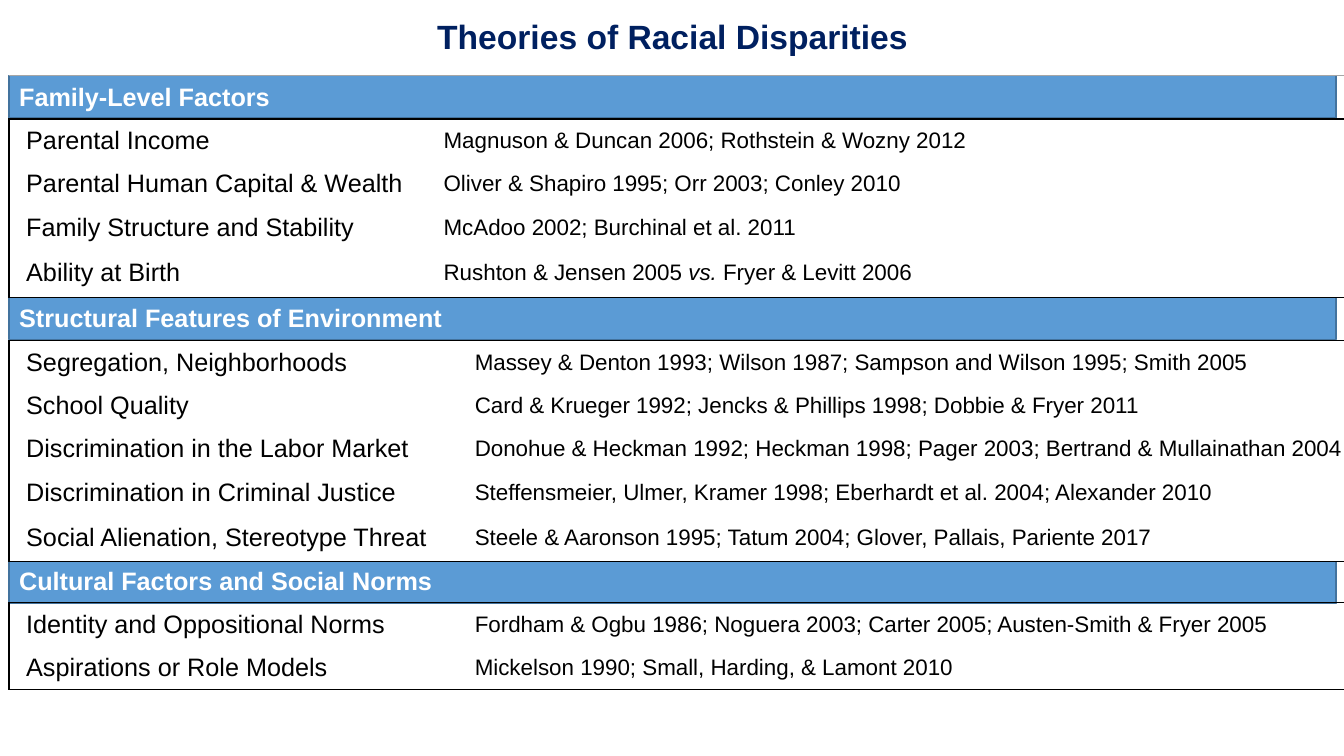
"""Builds a slide that tabulates theories of racial disparities with their citations."""
from lxml.etree import SubElement
from pptx import Presentation
from pptx.dml.color import RGBColor
from pptx.enum.shapes import MSO_SHAPE
from pptx.enum.text import MSO_ANCHOR, PP_ALIGN
from pptx.oxml.ns import qn
from pptx.util import Inches, Pt


def write(holder, text, size=18, color="000000", bold=False, align=PP_ALIGN.LEFT):
    """Write text into a cell or box; parts between asterisks are italic."""
    holder.vertical_anchor = MSO_ANCHOR.MIDDLE
    paragraph = getattr(holder, "text_frame", holder).paragraphs[0]
    paragraph.alignment = align
    for index, part in enumerate(text.split("*")):
        run = paragraph.add_run()
        run.text = part
        run.font.name = "Arial"
        run.font.size = Pt(size)
        run.font.bold = bold
        run.font.italic = index % 2 == 1
        run.font.color.rgb = RGBColor.from_string(color)


def set_borders(cell, **colors):
    """Draw the given sides in their colours and leave the other sides open."""
    cell.fill.background()
    properties = cell._tc.get_or_add_tcPr()
    for position, side in enumerate(("left", "right", "top", "bottom")):
        edge = properties.makeelement(qn("a:ln" + side[0].upper()), {"w": str(Pt(1))})
        if colors.get(side):
            fill = SubElement(edge, qn("a:solidFill"))
            SubElement(fill, qn("a:srgbClr"), val=colors[side])
        else:
            SubElement(edge, qn("a:noFill"))
        properties.insert(position, edge)


SECTIONS = [
    ("Family-Level Factors", 1, [
        ("Parental Income", "Magnuson & Duncan 2006; Rothstein & Wozny 2012"),
        ("Parental Human Capital & Wealth", "Oliver & Shapiro 1995; Orr 2003; Conley 2010"),
        ("Family Structure and Stability", "McAdoo 2002; Burchinal et al. 2011"),
        ("Ability at Birth", "Rushton & Jensen 2005 *vs.* Fryer & Levitt 2006"),
    ]),
    ("Structural Features of Environment", 2, [
        ("Segregation, Neighborhoods",
         "Massey & Denton 1993; Wilson 1987; Sampson and Wilson 1995; Smith 2005"),
        ("School Quality", "Card & Krueger 1992; Jencks & Phillips 1998; Dobbie & Fryer 2011"),
        ("Discrimination in the Labor Market",
         "Donohue & Heckman 1992; Heckman 1998; Pager 2003; Bertrand & Mullainathan 2004"),
        ("Discrimination in Criminal Justice",
         "Steffensmeier, Ulmer, Kramer 1998; Eberhardt et al. 2004; Alexander 2010"),
        ("Social Alienation, Stereotype Threat",
         "Steele & Aaronson 1995; Tatum 2004; Glover, Pallais, Pariente 2017"),
    ]),
    ("Cultural Factors and Social Norms", 2, [
        ("Identity and Oppositional Norms",
         "Fordham & Ogbu 1986; Noguera 2003; Carter 2005; Austen-Smith & Fryer 2005"),
        ("Aspirations or Role Models", "Mickelson 1990; Small, Harding, & Lamont 2010"),
    ]),
]
COLUMN_WIDTHS = [4.21, 0.13, 8.84]
ROW_HEIGHTS = [0.43] * 4 + [0.48] + [0.43] * 5 + [0.47, 0.41] + [0.43] * 2
LEFT, TOP = 0.09, 0.75
BAR_WIDTH, BAR_HEIGHT = 13.16, 0.42
BLACK = "000000"

presentation = Presentation()
presentation.slide_width, presentation.slide_height = Inches(13.33), Inches(7.5)
slide = presentation.slides.add_slide(presentation.slide_layouts[6])

header_row = 0
for heading, split, theories in SECTIONS:
    bar = slide.shapes.add_shape(
        MSO_SHAPE.RECTANGLE, Inches(LEFT), Inches(TOP + sum(ROW_HEIGHTS[:header_row])),
        Inches(BAR_WIDTH), Inches(BAR_HEIGHT))
    bar.shadow.inherit = False
    bar.fill.solid()
    bar.fill.fore_color.rgb = RGBColor.from_string("5B9BD5")
    bar.line.color.rgb = RGBColor.from_string("43739E")
    bar.line.width = Pt(1)
    header_row += 1 + len(theories)

title = slide.shapes.add_textbox(Inches(1.67), Inches(-0.04), Inches(10), Inches(0.79))
title.text_frame.word_wrap = True
write(title.text_frame, "Theories of Racial Disparities", size=24, color="002060",
      bold=True, align=PP_ALIGN.CENTER)

table = slide.shapes.add_table(
    len(ROW_HEIGHTS), len(COLUMN_WIDTHS), Inches(LEFT), Inches(TOP),
    Inches(sum(COLUMN_WIDTHS)), Inches(sum(ROW_HEIGHTS))).table
table.first_row = table.horz_banding = False
for column, width in zip(table.columns, COLUMN_WIDTHS):
    column.width = Inches(width)
for row, height in zip(table.rows, ROW_HEIGHTS):
    row.height = Inches(height)

row_index = 0
for heading, split, theories in SECTIONS:
    header = table.cell(row_index, 0)
    header.merge(table.cell(row_index, 2))
    write(header, heading, color="FFFFFF", bold=True)
    for column_index in range(3):
        set_borders(table.cell(row_index, column_index),
                    top=BLACK if row_index else "A6A6A6", bottom=BLACK)
    for number, (theory, citations) in enumerate(theories, start=1):
        row_index += 1
        theory_cell, citation_cell = table.cell(row_index, 0), table.cell(row_index, split)
        if split == 2:
            theory_cell.merge(table.cell(row_index, 1))
        else:
            citation_cell.merge(table.cell(row_index, 2))
        theory_cell.margin_left = Inches(0.17)
        write(theory_cell, theory)
        write(citation_cell, citations, size=16)
        for column_index in range(3):
            set_borders(table.cell(row_index, column_index),
                        left=BLACK if column_index == 0 else None,
                        right=BLACK if column_index >= split else None,
                        top=BLACK if number == 1 else None,
                        bottom=BLACK if number == len(theories) else None)
    row_index += 1

presentation.save("out.pptx")
